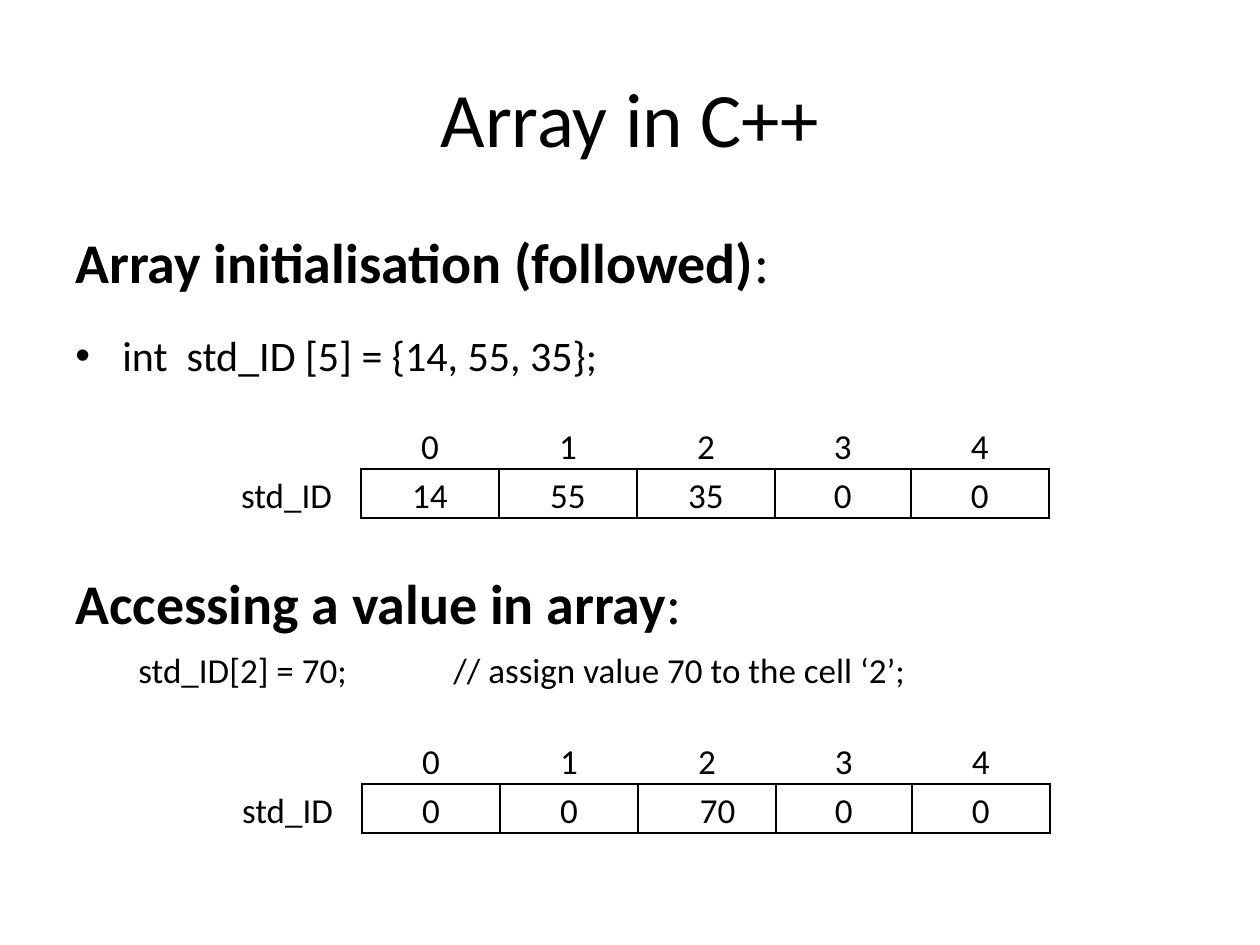
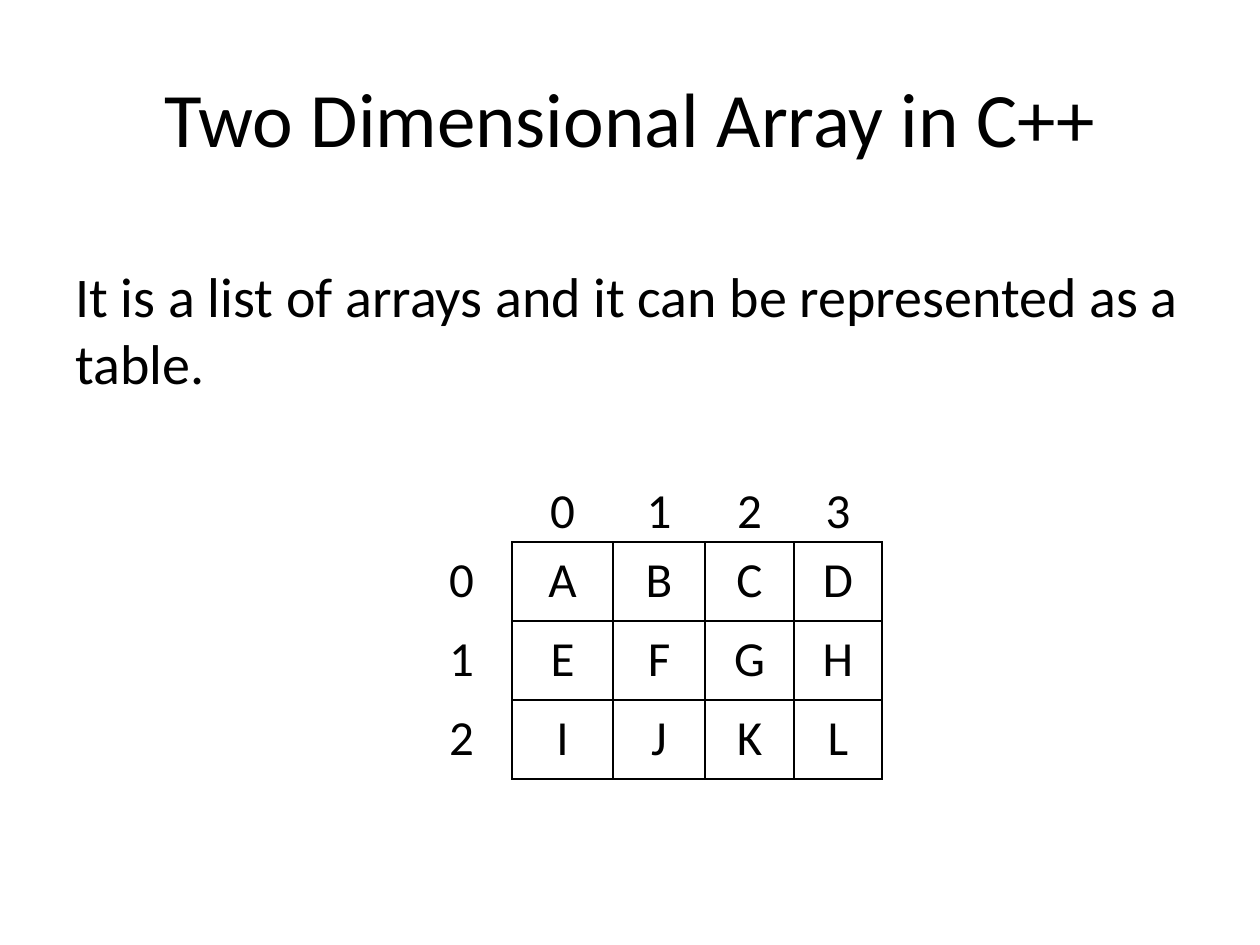
from lxml import etree
from pptx import Presentation
from pptx import util as u
from pptx.dml.color import RGBColor
from pptx.enum import text as t
from pptx.oxml import ns

INK = RGBColor(0x00, 0x00, 0x00)
FONT = "Calibri"
PX_PER_INCH = 126
SLIDE_BOX = (1260, 945)
TITLE_BOX = (63, 38, 1134, 158)
PLAIN_TABLE_STYLE = "{2D5ABB26-0587-4C30-8999-92F81FD0307C}"
TITLE_ONLY = 5
LEFT, CENTER = t.PP_ALIGN.LEFT, t.PP_ALIGN.CENTER


def px(length):
    return u.Emu(round(length * 914400 / PX_PER_INCH))


def write(paragraph, content, size, bold=False, align=LEFT, before=0, spacing=1.0):
    paragraph.alignment = align
    paragraph.space_before = u.Pt(before)
    paragraph.line_spacing = spacing
    run = paragraph.add_run()
    run.text = content
    run.font.name = FONT
    run.font.size = u.Pt(size)
    run.font.bold = bold
    run.font.color.rgb = INK


def indent(paragraph, left, first=0, bullet=None):
    properties = paragraph._p.get_or_add_pPr()
    properties.set("marL", str(px(left)))
    properties.set("indent", str(px(first)))
    if bullet:
        etree.SubElement(properties, ns.qn("a:buFont")).set("typeface", "Arial")
        etree.SubElement(properties, ns.qn("a:buChar")).set("char", bullet)


def add_titled_slide(deck, title):
    slide = deck.slides.add_slide(deck.slide_layouts[TITLE_ONLY])
    heading = slide.shapes.title
    heading.left, heading.top, heading.width, heading.height = map(px, TITLE_BOX)
    heading.text_frame.vertical_anchor = t.MSO_ANCHOR.MIDDLE
    write(heading.text_frame.paragraphs[0], title, 44, align=CENTER)
    return slide


def add_body(slide, box):
    frame = slide.shapes.add_textbox(*map(px, box)).text_frame
    frame.word_wrap = True
    return frame


def write_heading(paragraph, heading, before=0):
    write(paragraph, heading, 32, bold=True, before=before)
    write(paragraph, ":", 32, before=before)


def draw_borders(cell, sides):
    properties = cell._tc.get_or_add_tcPr()
    for position, side in enumerate(sides):
        line = etree.Element(ns.qn(f"a:ln{side}"), w=str(u.Pt(1)))
        fill = etree.SubElement(line, ns.qn("a:solidFill"))
        etree.SubElement(fill, ns.qn("a:srgbClr")).set("val", str(INK))
        properties.insert(position, line)


def add_array(slide, origin, widths, heights, rows, size):
    box = (*origin, sum(widths), sum(heights))
    grid = slide.shapes.add_table(len(rows), len(widths), *map(px, box)).table
    grid.first_row = grid.horz_banding = False
    grid._tbl.tblPr.find(ns.qn("a:tableStyleId")).text = PLAIN_TABLE_STYLE
    for column, width in zip(grid.columns, widths):
        column.width = px(width)
    for row, height in zip(grid.rows, heights):
        row.height = px(height)
    for r, values in enumerate(rows):
        for c, value in enumerate(values):
            cell = grid.cell(r, c)
            cell.margin_left = cell.margin_right = px(9)
            cell.margin_top = cell.margin_bottom = 0
            cell.fill.background()
            if value:
                write(cell.text_frame.paragraphs[0], value, size, align=CENTER, spacing=1.15)
            if r and c:
                draw_borders(cell, "LRTB")
            elif r:
                draw_borders(cell, "R")
            elif c:
                draw_borders(cell, "B")
    return grid


def add_student_ids(slide, origin, values):
    rows = [["", *"01234"], ["std_ID", *values]]
    return add_array(slide, origin, (149, 138, 138, 138, 136, 138), (49, 49), rows, 20)


def build_array_slide(deck):
    slide = add_titled_slide(deck, "Array in C++")
    body = add_body(slide, (63, 221, 1134, 624))
    write_heading(body.paragraphs[0], "Array initialisation (followed)")
    declaration = body.add_paragraph()
    write(declaration, "int  std_ID [5] = {14, 55, 35};", 24, before=20)
    indent(declaration, 47, -47, "•")
    write_heading(body.add_paragraph(), "Accessing a value in array", before=108)
    write(body.add_paragraph(),
          "\tstd_ID[2] = 70;\t\t// assign value 70 to the cell ‘2’;", 20, before=7)

    assigned = add_student_ids(slide, (213, 735), ["0", "0", "70", "0", "0"])
    changed_value = assigned.cell(1, 3).text_frame.paragraphs[0]
    changed_value.alignment = LEFT
    indent(changed_value, 53)
    add_student_ids(slide, (212, 420), ["14", "55", "35", "0", "0"])


def build_two_dimensional_slide(deck):
    slide = add_titled_slide(deck, "Two Dimensional Array in C++")
    body = add_body(slide, (63, 255, 1134, 658))
    write(body.paragraphs[0],
          "It is a list of arrays and it can be represented as a table.", 32)
    rows = [["", *"0123"], [*"0ABCD"], [*"1EFGH"], [*"2IJKL"]]
    add_array(slide, (411, 473), (101, 101, 92, 89, 88), (69, 79, 79, 79), rows, 28)


def main():
    deck = Presentation()
    deck.slide_width, deck.slide_height = map(px, SLIDE_BOX)
    build_array_slide(deck)
    build_two_dimensional_slide(deck)
    deck.save("out.pptx")


if __name__ == "__main__":
    main()
